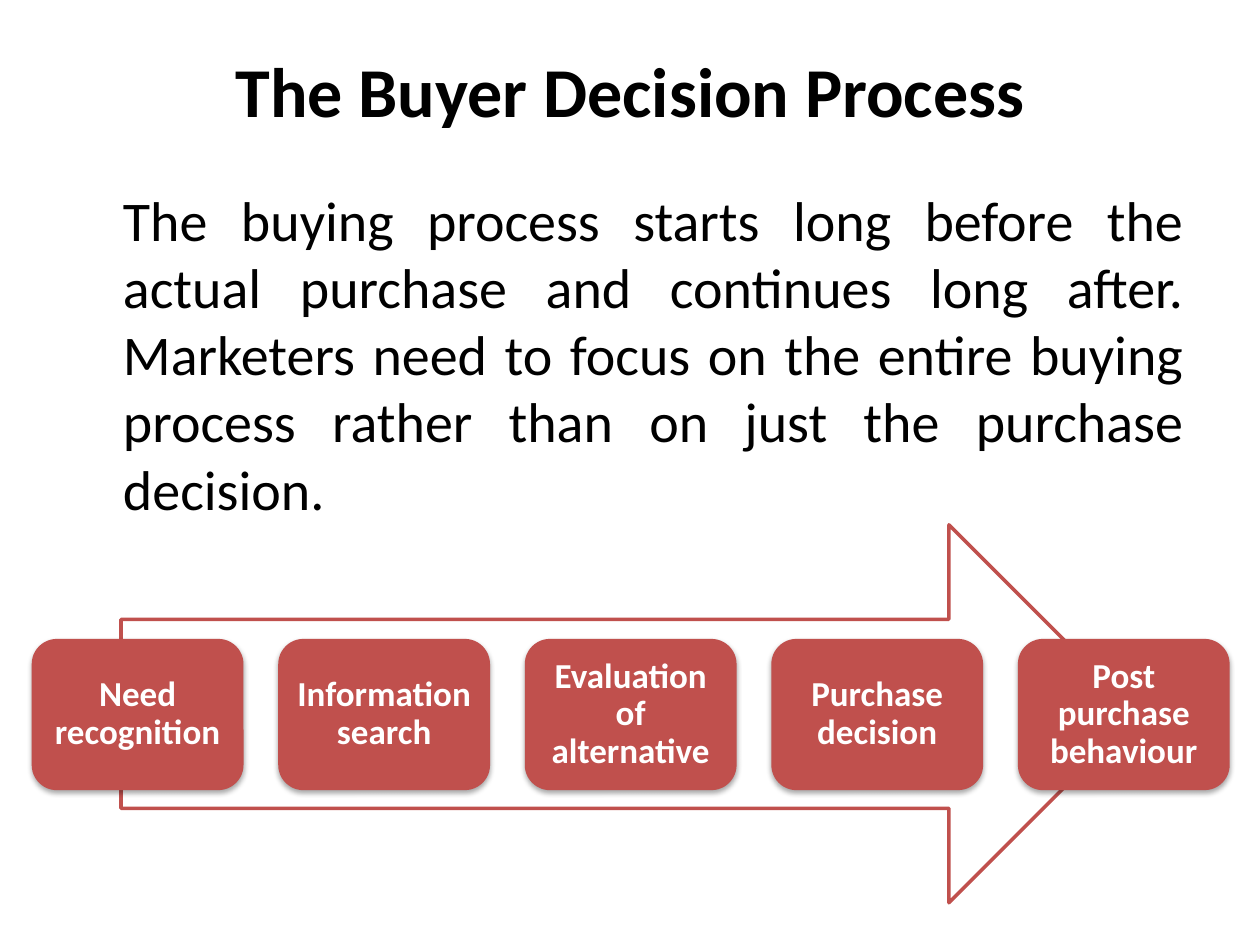
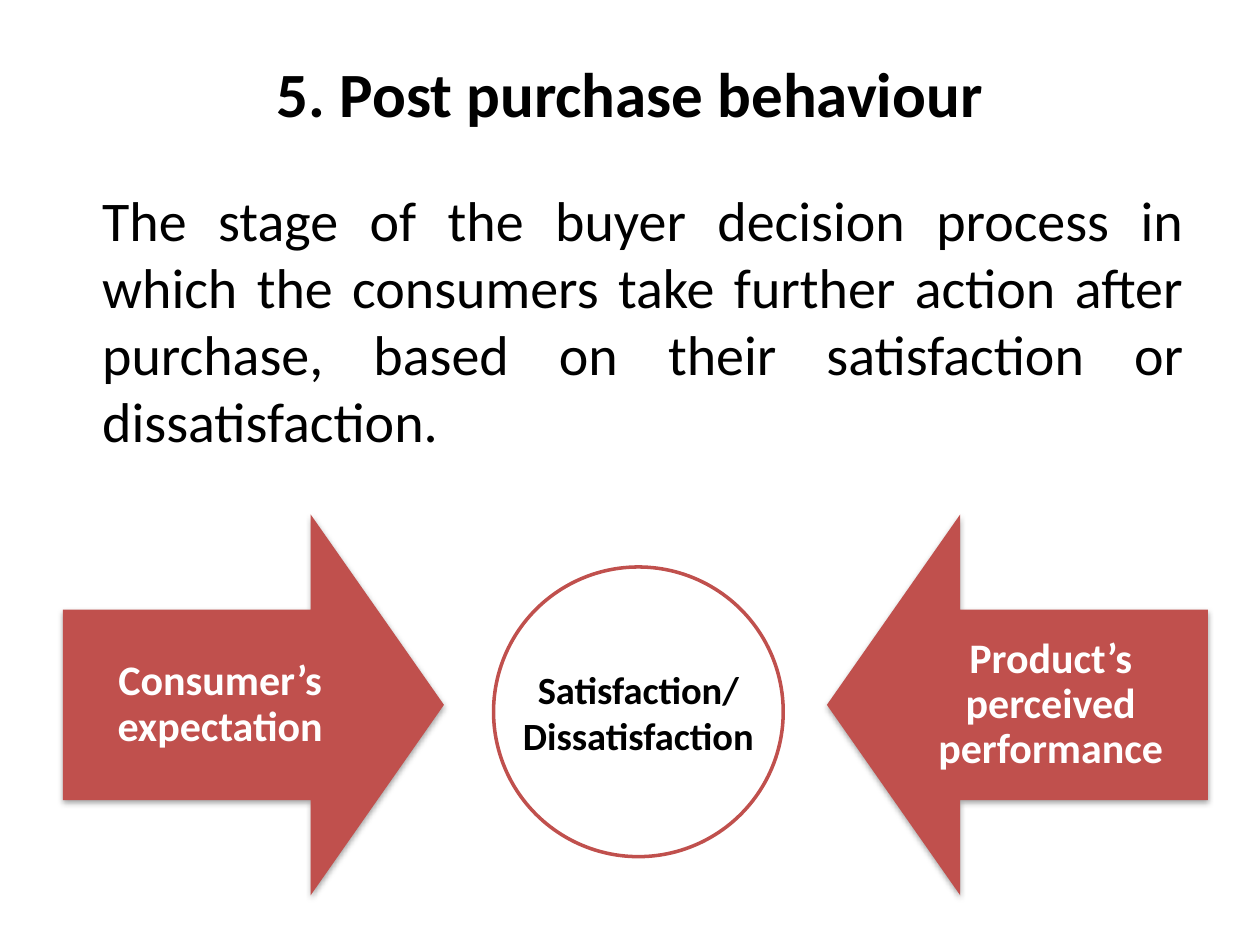
from dataclasses import dataclass

from lxml import etree
from pptx import Presentation
from pptx.dml.color import RGBColor
from pptx.enum.shapes import MSO_SHAPE
from pptx.enum.text import MSO_ANCHOR, PP_ALIGN
from pptx.oxml.ns import qn
from pptx.util import Cm, Pt

ROUNDED = MSO_SHAPE.ROUNDED_RECTANGLE
RIGHT_ARROW = MSO_SHAPE.RIGHT_ARROW
LEFT_ARROW = MSO_SHAPE.LEFT_ARROW
OVAL = MSO_SHAPE.OVAL
CENTER = PP_ALIGN.CENTER
JUSTIFY = PP_ALIGN.JUSTIFY
MIDDLE = MSO_ANCHOR.MIDDLE

FONT = "Calibri"
COLORS = {"text": "000000", "accent": "C0504D", "light": "FFFFFF"}
SLIDE_WIDTH, SLIDE_HEIGHT = 25.4, 19.05
CONTENT_RIGHT = 24.13
BODY_TOP = 3.61
BODY_INDENT = 1.21

STAGES = (
    "Need recognition",
    "Information search",
    "Evaluation of alternative",
    "Purchase decision",
    "Post purchase behaviour",
)
STAGE_LEFT, STAGE_TOP, STAGE_PITCH = 0.64, 12.88, 4.97
STAGE_WIDTH, STAGE_HEIGHT = 4.27, 3.05


@dataclass(frozen=True)
class Box:
    """Position and size in centimetres."""
    left: float
    top: float
    width: float
    height: float

    def lengths(self) -> tuple:
        return Cm(self.left), Cm(self.top), Cm(self.width), Cm(self.height)


@dataclass(frozen=True)
class Figure:
    kind: int
    box: Box
    lines: tuple = ()
    size: int = 20
    margin: float = 0.18
    filled: bool = True
    wrap: bool = True
    adjustments: tuple = ()


def color(name: str) -> RGBColor:
    return RGBColor.from_string(COLORS[name])


def write_lines(text_frame, lines: tuple, size: int, color_name: str,
                alignment, bold: bool = True, spacing: float = 1.0) -> None:
    for index, line in enumerate(lines):
        paragraph = text_frame.paragraphs[0] if index == 0 else text_frame.add_paragraph()
        paragraph.text = line
        paragraph.alignment = alignment
        paragraph.line_spacing = spacing
        paragraph.space_before = Pt(0)
        formats = {"name": FONT, "size": Pt(size), "bold": bold}
        for attribute, value in formats.items():
            setattr(paragraph.font, attribute, value)
        paragraph.font.color.rgb = color(color_name)


def add_soft_shadow(shape) -> None:
    """Cast a short, blurred shadow straight down."""
    effects = shape._element.spPr.find(qn("a:effectLst"))
    shadow = etree.SubElement(effects, qn("a:outerShdw"), blurRad="40000",
                              dist="23000", dir="5400000", rotWithShape="0")
    shade = etree.SubElement(shadow, qn("a:srgbClr"), val=COLORS["text"])
    etree.SubElement(shade, qn("a:alpha"), val="35000")


def add_figure(slide, figure: Figure) -> None:
    shape = slide.shapes.add_shape(figure.kind, *figure.box.lengths())
    for index, value in enumerate(figure.adjustments):
        shape.adjustments[index] = value
    shape.shadow.inherit = False
    shape.fill.solid()
    shape.fill.fore_color.rgb = color("accent" if figure.filled else "light")
    if figure.filled:
        shape.line.fill.background()
        add_soft_shadow(shape)
    else:
        shape.line.color.rgb = color("accent")
        shape.line.width = Pt(2)
    text_frame = shape.text_frame
    text_frame.word_wrap = figure.wrap
    text_frame.vertical_anchor = MIDDLE
    for side in ("left", "top", "right", "bottom"):
        setattr(text_frame, f"margin_{side}", Cm(figure.margin))
    write_lines(text_frame, figure.lines, figure.size,
                "light" if figure.filled else "text", CENTER,
                spacing=0.9 if figure.filled else 1.0)


def add_text_slide(presentation, title: str, title_box: Box, title_size: int,
                   body: str, body_left: float, body_height: float):
    slide = presentation.slides.add_slide(presentation.slide_layouts[5])
    heading = slide.shapes.title
    heading.left, heading.top, heading.width, heading.height = title_box.lengths()
    heading.text_frame.vertical_anchor = MIDDLE
    write_lines(heading.text_frame, (title,), title_size, "text", CENTER)

    body_box = Box(body_left, BODY_TOP, CONTENT_RIGHT - body_left, body_height)
    text_frame = slide.shapes.add_textbox(*body_box.lengths()).text_frame
    text_frame.word_wrap = True
    text_frame.margin_left = Cm(BODY_INDENT)
    write_lines(text_frame, (body,), 32, "text", JUSTIFY, bold=False)
    return slide


def build_process_slide(presentation) -> None:
    slide = add_text_slide(
        presentation, "The Buyer Decision Process", Box(1.27, 0.64, 22.86, 2.33), 40,
        "The buying process starts long before the actual purchase and continues "
        "long after. Marketers need to focus on the entire buying process rather "
        "than on just the purchase decision.",
        1.27, 7.41)
    add_figure(slide, Figure(RIGHT_ARROW, Box(2.44, 10.58, 20.5, 7.62), filled=False))
    for index, stage in enumerate(STAGES):
        box = Box(STAGE_LEFT + index * STAGE_PITCH, STAGE_TOP, STAGE_WIDTH, STAGE_HEIGHT)
        add_figure(slide, Figure(ROUNDED, box, (stage,)))


def build_post_purchase_slide(presentation) -> None:
    slide = add_text_slide(
        presentation, "5. Post purchase behaviour", Box(1.27, 0.76, 22.86, 2.21), 36,
        "The stage of the buyer decision process in which the consumers take "
        "further action after purchase, based on their satisfaction or "
        "dissatisfaction.",
        0.85, 6.15)
    arrows = (
        (RIGHT_ARROW, 1.27, "Consumer’s expectation"),
        (LEFT_ARROW, 16.67, "Product’s perceived performance"),
    )
    for kind, left, label in arrows:
        add_figure(slide, Figure(kind, Box(left, 10.37, 7.68, 7.68), (label,), size=24,
                                 margin=0.48, adjustments=(0.5, 0.35)))
    add_figure(slide, Figure(OVAL, Box(9.95, 11.43, 5.84, 5.84),
                             ("Satisfaction/", "Dissatisfaction"), size=22,
                             filled=False, wrap=False))


def main() -> None:
    presentation = Presentation()
    presentation.slide_width = Cm(SLIDE_WIDTH)
    presentation.slide_height = Cm(SLIDE_HEIGHT)
    build_process_slide(presentation)
    build_post_purchase_slide(presentation)
    presentation.save("out.pptx")


if __name__ == "__main__":
    main()
